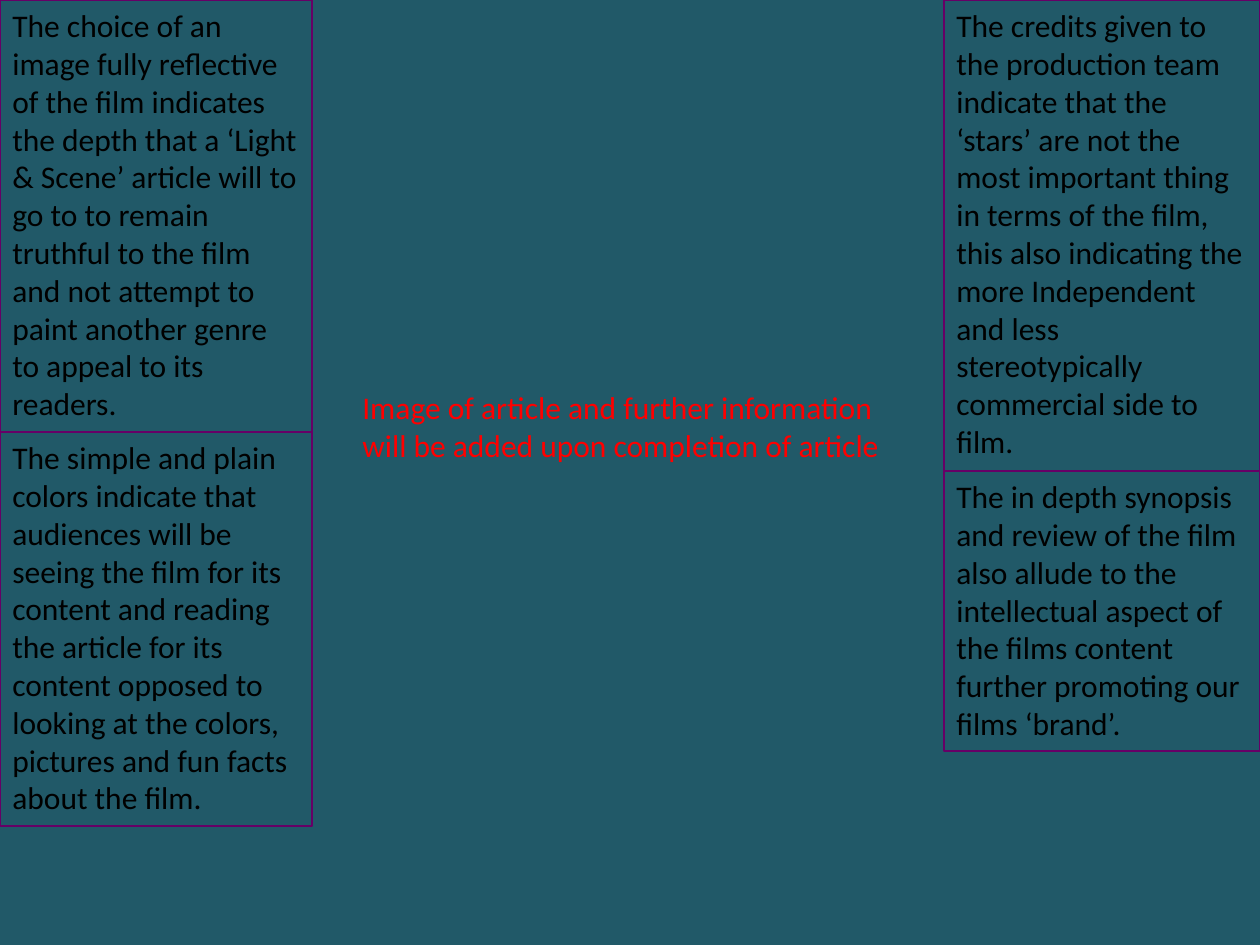
from dataclasses import dataclass

from pptx import Presentation
from pptx.dml.color import RGBColor
from pptx.enum.text import MSO_AUTO_SIZE as AutoSize
from pptx.slide import Slide
from pptx.util import Emu, Pt

EMU_PER_PX = 914400 / 126
SLIDE_WIDTH, SLIDE_HEIGHT = 1260, 945
BACKGROUND, BORDER, INK, NOTICE_RED = "215968", "660066", "000000", "FF0000"


@dataclass(frozen=True)
class Note:
    text: str
    height: int


@dataclass(frozen=True)
class Column:
    left: int
    width: int
    notes: tuple[Note, ...]


COLUMNS = (
    Column(0, 312, (
        Note("The choice of an image fully reflective of the film indicates the depth "
             "that a ‘Light & Scene’ article will to go to to remain truthful to the film "
             "and not attempt to paint another genre to appeal to its readers.", 432),
        Note("The simple and plain colors indicate that audiences will be seeing the film "
             "for its content and reading the article for its content opposed to looking "
             "at the colors, pictures and fun facts about the film.", 394),
    )),
    Column(944, 316, (
        Note("The credits given to the production team indicate that the ‘stars’ are not "
             "the most important thing in terms of the film, this also indicating the more "
             "Independent and less stereotypically commercial side to film.", 471),
        Note("The in depth synopsis and review of the film also allude to the intellectual "
             "aspect of the films content further promoting our films ‘brand’.", 280),
    )),
)
NOTICE = "Image of article and further information will be added upon completion of article"


def px(length: int) -> Emu:
    return Emu(round(length * EMU_PER_PX))


def color(hex_code: str) -> RGBColor:
    return RGBColor.from_string(hex_code)


def draw_text(slide: Slide, text: str, left: int, top: int, width: int, height: int,
              ink: str, border: str | None = None) -> None:
    box = slide.shapes.add_textbox(px(left), px(top), px(width), px(height))
    frame = box.text_frame
    frame.word_wrap = True
    frame.auto_size = AutoSize.SHAPE_TO_FIT_TEXT
    frame.text = text
    font = frame.paragraphs[0].runs[0].font
    font.name = "Calibri"
    font.size = Pt(18)
    font.color.rgb = color(ink)
    if border:
        box.line.color.rgb = color(border)
        box.line.width = Pt(0.75)


def draw_column(slide: Slide, column: Column) -> None:
    top = 0
    for note in column.notes:
        draw_text(slide, note.text, column.left, top, column.width, note.height, INK, BORDER)
        top += note.height


def main() -> None:
    deck = Presentation()
    deck.slide_width, deck.slide_height = px(SLIDE_WIDTH), px(SLIDE_HEIGHT)
    slide = deck.slides.add_slide(deck.slide_layouts[6])
    slide.background.fill.solid()
    slide.background.fill.fore_color.rgb = color(BACKGROUND)
    for column in COLUMNS:
        draw_column(slide, column)
    draw_text(slide, NOTICE, 350, 382, 568, 89, NOTICE_RED)
    deck.save("out.pptx")


if __name__ == "__main__":
    main()
